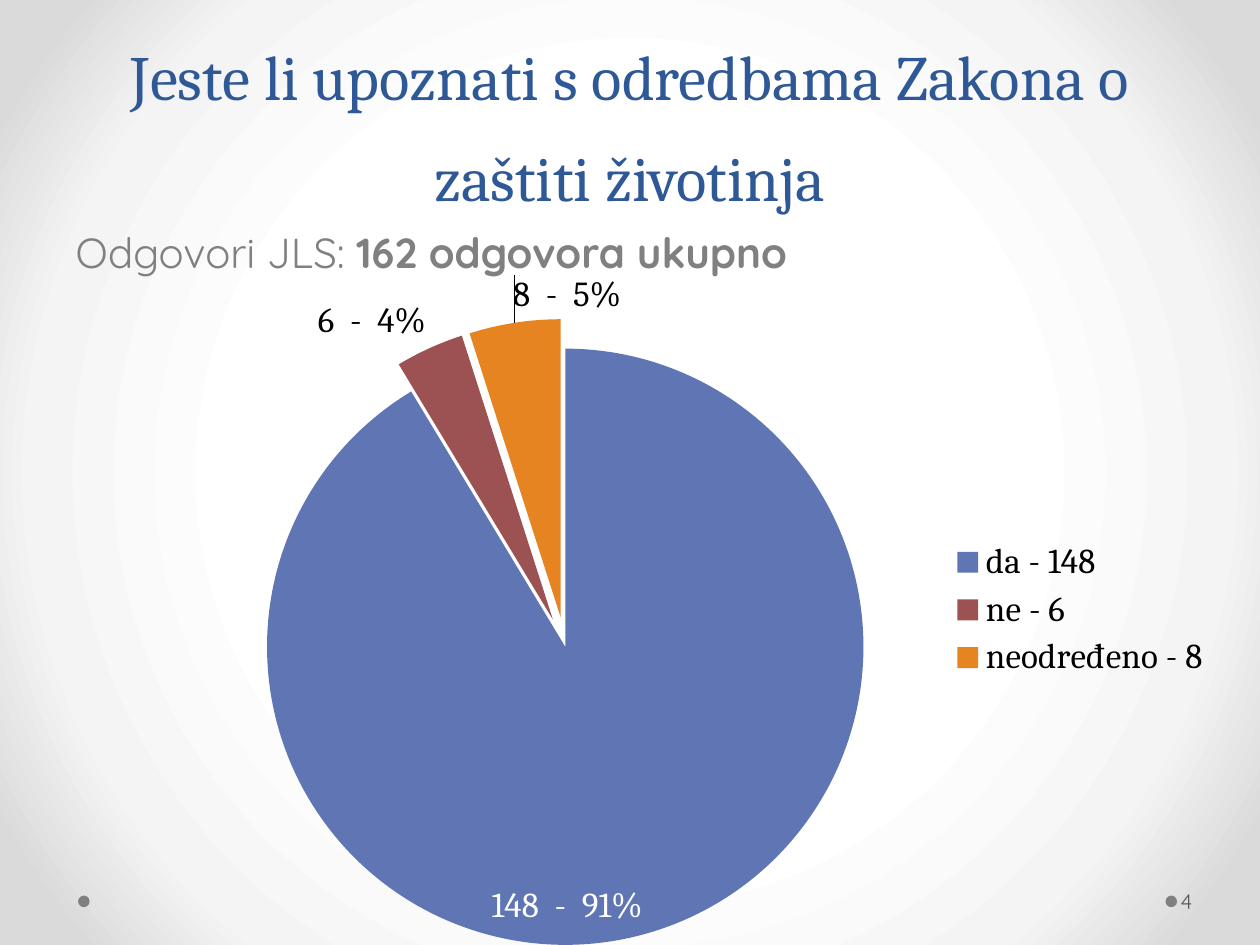
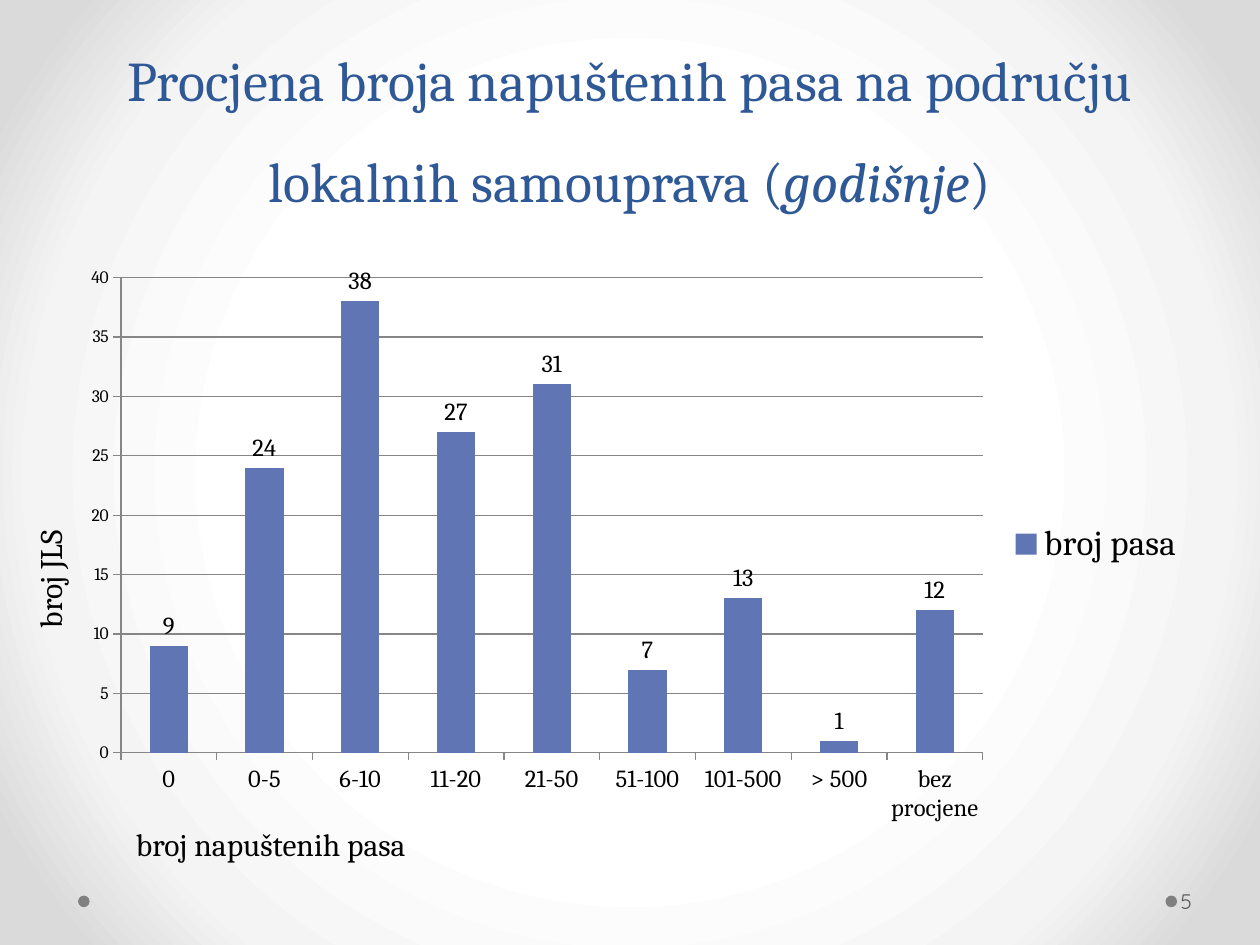
import pptx
import pptx.chart.data
import pptx.dml.color
import pptx.enum.chart
import pptx.enum.shapes
import pptx.enum.text
import pptx.oxml
import pptx.oxml.ns
import pptx.util

Pt = pptx.util.Pt
RGBColor = pptx.dml.color.RGBColor
kinds = pptx.enum.chart.XL_CHART_TYPE
spots = pptx.enum.chart.XL_LABEL_POSITION
anchors = pptx.enum.text.MSO_ANCHOR
qn = pptx.oxml.ns.qn

NAVY = RGBColor(0x2F, 0x58, 0x97)
BLUE = RGBColor(0x60, 0x76, 0xB4)
RED = RGBColor(0x9C, 0x52, 0x52)
ORANGE = RGBColor(0xE6, 0x84, 0x22)
GREY = RGBColor(0x80, 0x80, 0x80)
SLATE = RGBColor(0x59, 0x59, 0x59)
LINE = RGBColor(0x86, 0x86, 0x86)
BLACK = RGBColor(0, 0, 0)
WHITE = RGBColor(0xFF, 0xFF, 0xFF)
PALE = RGBColor(0xF4, 0xF4, 0xF4)
EDGE = RGBColor(0xDA, 0xDA, 0xDA)
SERIF = "Cambria"
SANS = "Quicksand"


def make(tag, **attrs):
    node = pptx.oxml.parse_xml(f'<{tag} {pptx.oxml.ns.nsdecls(tag.split(":")[0])}/>')
    for key, val in attrs.items():
        node.set(key, str(val))
    return node


def paint_back(master):
    master.background.fill.gradient()
    grad = next(master.element.iter(qn("a:gradFill")))
    for node in list(grad):
        grad.remove(node)
    stops = make("a:gsLst")
    for pos, color in ((50, WHITE), (76, PALE), (92, EDGE)):
        stop = make("a:gs", pos=pos * 1000)
        stop.append(make("a:srgbClr", val=color))
        stops.append(stop)
    round_off = make("a:path", path="circle")
    round_off.append(make("a:fillToRect", l=50000, t=50000, r=50000, b=50000))
    grad.extend([stops, round_off])


def style(font, size, color, face=SERIF):
    font.size = Pt(size)
    font.name = face
    font.color.rgb = color


def add_runs(para, runs, size, color, face=SERIF):
    for text, bold, slant in runs:
        run = para.add_run()
        run.text = text
        style(run.font, size, color, face)
        run.font.bold = bold
        run.font.italic = slant


def place(shape, left, top, width, height):
    shape.left, shape.top = Pt(left), Pt(top)
    shape.width, shape.height = Pt(width), Pt(height)


def set_title(slide, runs, size):
    title = slide.shapes.title
    place(title, 36, 0, 648, 126)
    frame = title.text_frame
    frame.auto_size = pptx.enum.text.MSO_AUTO_SIZE.NONE
    frame.vertical_anchor = anchors.BOTTOM
    para = frame.paragraphs[0]
    para.alignment = pptx.enum.text.PP_ALIGN.CENTER
    para.line_spacing = Pt(58)
    add_runs(para, runs, size, NAVY)


def set_body(slide, runs):
    body = slide.placeholders[1]
    place(body, 36, 126, 648, 356.4)
    para = body.text_frame.paragraphs[0]
    para.space_before = Pt(4.8)
    props = para._p.get_or_add_pPr()
    props.set("marL", "0")
    props.set("indent", "0")
    props.append(make("a:buNone"))
    add_runs(para, runs, 24, GREY, SANS)


def add_text(slide, box, text, size, color, face=SERIF, turn=0):
    shape = slide.shapes.add_textbox(*map(Pt, box))
    shape.rotation = turn
    shape.text_frame.word_wrap = True
    add_runs(shape.text_frame.paragraphs[0], [(text, False, False)], size, color, face)
    return shape.text_frame


def add_foot(slide, number):
    for left in (44.6, 666):
        dot = slide.shapes.add_shape(
            pptx.enum.shapes.MSO_SHAPE.OVAL, Pt(left), Pt(511.8), Pt(6.6), Pt(6.6))
        dot.shadow.inherit = False
        dot.fill.solid()
        dot.fill.fore_color.rgb = GREY
        dot.line.fill.background()
    frame = add_text(slide, (672.5, 500.4, 44, 28.8), number, 12, SLATE, SANS)
    frame.vertical_anchor = anchors.MIDDLE
    frame.margin_left = Pt(2.2)
    frame.margin_right = frame.margin_top = frame.margin_bottom = Pt(3.6)


def fix_spot(x, y, w=None, h=None):
    layout = make("c:layout")
    spot = make("c:manualLayout")
    if w:
        spot.append(make("c:layoutTarget", val="inner"))
        spot.extend([make("c:xMode", val="edge"), make("c:yMode", val="edge")])
    for key, val in zip("xywh", (x, y, w, h)):
        if val is not None:
            spot.append(make(f"c:{key}", val=val))
    layout.append(spot)
    return layout


def add_chart(slide, kind, box, cats, name, vals, plot):
    data = pptx.chart.data.CategoryChartData()
    data.categories = cats
    data.add_series(name, vals)
    chart = slide.shapes.add_chart(kind, *map(Pt, box), data).chart
    chart.has_title = False
    style(chart.font, 10, BLACK)
    chart.has_legend = True
    chart.legend.position = pptx.enum.chart.XL_LEGEND_POSITION.RIGHT
    chart.legend.include_in_layout = False
    style(chart.legend.font, 20, BLACK)
    area = next(chart.element.iter(qn("c:plotArea")))
    for old in area.findall(qn("c:layout")):
        area.remove(old)
    area.insert(0, fix_spot(*plot))
    return chart


def add_pie(slide):
    chart = add_chart(slide, kinds.PIE, (82, 157, 618, 383),
                      ("da - 148", "ne - 6", "neodređeno - 8"),
                      "Series 1", (148, 6, 8), (0.11, 0.11, 0.56, 0.89))
    chart.plots[0].vary_by_categories = True
    series = chart.plots[0].series[0]
    looks = ((BLUE, WHITE, spots.INSIDE_END), (RED, BLACK, spots.OUTSIDE_END),
             (ORANGE, BLACK, spots.OUTSIDE_END))
    for i, (color, ink, spot) in enumerate(looks):
        point = series.points[i]
        point.format.fill.solid()
        point.format.fill.fore_color.rgb = color
        style(point.data_label.font, 20, ink)
        point.data_label.position = spot
    for part in list(chart.element.iter(qn("c:dPt")))[1:]:
        part.find(qn("c:spPr")).addprevious(make("c:explosion", val=10))
    labels = list(chart.element.iter(qn("c:dLbl")))
    for label in labels:
        label.find(qn("c:showPercent")).set("val", "1")
        gap = make("c:separator")
        gap.text = "  -  "
        label.append(gap)
    labels[2].insert(1, fix_spot(0.1, -0.06))


def add_bars(slide):
    cats = ("0", "0-5", "6-10", "11-20", "21-50", "51-100", "101-500",
            "> 500", "bez procjene")
    chart = add_chart(slide, kinds.COLUMN_CLUSTERED, (36.7, 145.4, 648, 331.2), cats,
                      "broj pasa", (9, 24, 38, 27, 31, 7, 13, 1, 12),
                      (0.05, 0.04, 0.76, 0.82))
    plot = chart.plots[0]
    plot.vary_by_categories = False
    plot.gap_width = 150
    fill = plot.series[0].format.fill
    fill.solid()
    fill.fore_color.rgb = BLUE
    plot.has_data_labels = True
    plot.data_labels.show_value = True
    plot.data_labels.position = spots.OUTSIDE_END
    style(plot.data_labels.font, 14, BLACK)
    for axis, size in ((chart.category_axis, 14), (chart.value_axis, 10)):
        style(axis.tick_labels.font, size, BLACK)
        axis.major_tick_mark = pptx.enum.chart.XL_TICK_MARK.OUTSIDE
        axis.format.line.color.rgb = LINE
    scale = chart.value_axis
    scale.minimum_scale, scale.maximum_scale, scale.major_unit = 0, 40, 5
    scale.has_major_gridlines = True
    scale.major_gridlines.format.line.color.rgb = LINE


def main():
    prs = pptx.Presentation()
    prs.slide_width, prs.slide_height = Pt(720), Pt(540)
    paint_back(prs.slide_master)

    slide = prs.slides.add_slide(prs.slide_layouts[1])
    set_title(slide, [("Jeste li upoznati s odredbama Zakona o zaštiti životinja",
                       False, False)], 36)
    set_body(slide, [("Odgovori JLS: ", False, False),
                     ("162 odgovora ukupno", True, False)])
    add_foot(slide, "4")
    add_pie(slide)

    slide = prs.slides.add_slide(prs.slide_layouts[5])
    set_title(slide, [("Procjena broja napuštenih pasa na području lokalnih samouprava (",
                       False, False), ("godišnje", False, True), (")", False, False)], 32)
    add_bars(slide)
    add_foot(slide, "5")
    add_text(slide, (70.6, 468, 278, 28.8), "broj napuštenih pasa", 18, BLACK)
    add_text(slide, (-42.5, 280.8, 141.8, 28.8), "broj JLS", 18, BLACK, turn=270)

    prs.save("out.pptx")


if __name__ == "__main__":
    main()
